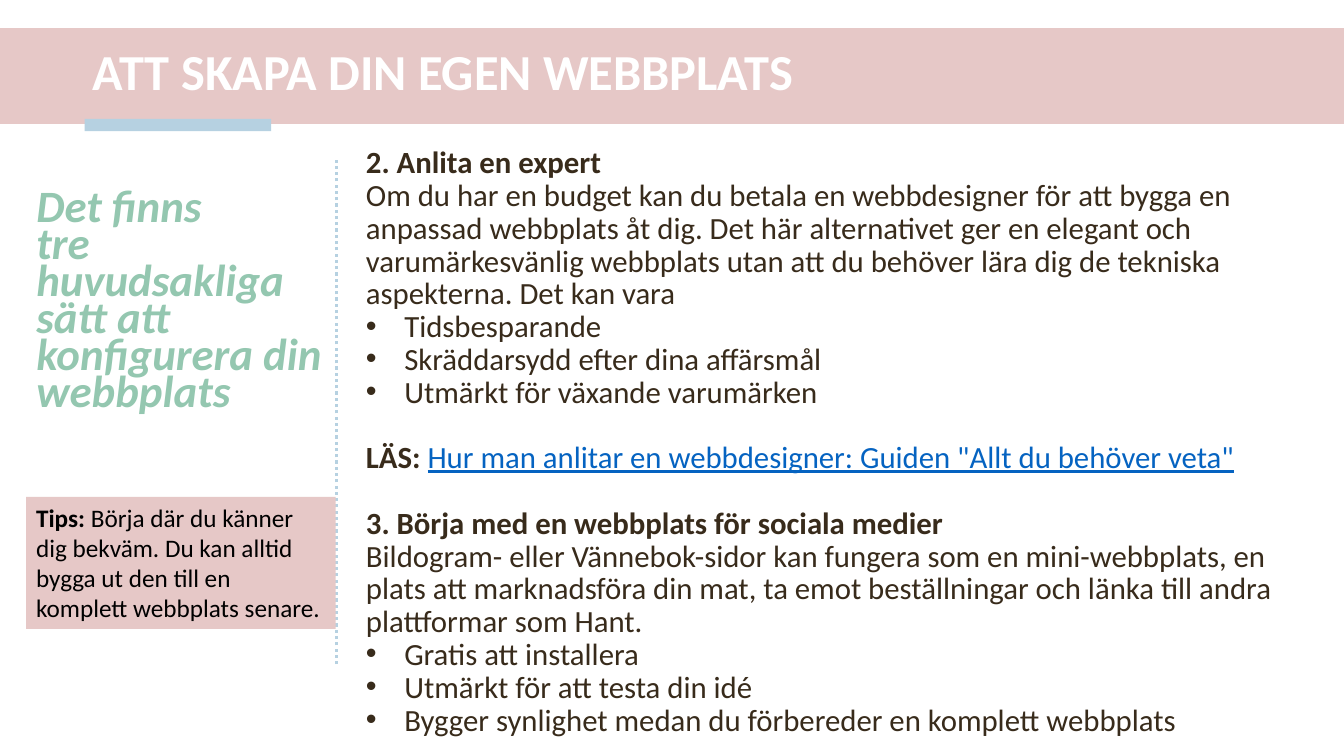
from dataclasses import dataclass

from lxml.etree import SubElement
from pptx import Presentation
from pptx.dml.color import RGBColor
from pptx.enum.dml import MSO_LINE
from pptx.enum.shapes import MSO_CONNECTOR, MSO_SHAPE
from pptx.enum.text import MSO_ANCHOR, MSO_AUTO_SIZE, PP_ALIGN
from pptx.oxml.ns import qn
from pptx.util import Inches, Pt


@dataclass(frozen=True)
class Theme:
    font: str = "Calibri"
    pink: RGBColor = RGBColor(0xE6, 0xC8, 0xC7)
    blue: RGBColor = RGBColor(0xB6, 0xD1, 0xE1)
    green: RGBColor = RGBColor(0x94, 0xC7, 0xB0)
    brown: RGBColor = RGBColor(0x38, 0x2B, 0x1B)
    link: RGBColor = RGBColor(0x05, 0x63, 0xC1)
    white: RGBColor = RGBColor(0xFF, 0xFF, 0xFF)
    black: RGBColor = RGBColor(0, 0, 0)
    title_size: Pt = Pt(36)
    quote_size: Pt = Pt(32)
    body_size: Pt = Pt(22)
    tip_size: Pt = Pt(18)
    quote_leading: Pt = Pt(26.4)
    body_leading: Pt = Pt(23.4)


THEME = Theme()

TITLE = "ATT SKAPA DIN EGEN WEBBPLATS"
QUOTE = ["Det finns", "tre huvudsakliga sätt att konfigurera din webbplats"]
TIP_LABEL = "Tips: "
TIP = "Börja där du känner dig bekväm. Du kan alltid bygga ut den till en komplett webbplats senare."
READ_LABEL = "LÄS: "
READ_LINK = 'Hur man anlitar en webbdesigner: Guiden "Allt du behöver veta"'
OPTIONS = [
    (
        "2. Anlita en expert",
        "Om du har en budget kan du betala en webbdesigner för att bygga en anpassad webbplats åt dig. "
        "Det här alternativet ger en elegant och varumärkesvänlig webbplats utan att du behöver lära dig "
        "de tekniska aspekterna. Det kan vara",
        ["Tidsbesparande", "Skräddarsydd efter dina affärsmål", "Utmärkt för växande varumärken"],
    ),
    (
        "3. Börja med en webbplats för sociala medier",
        "Bildogram- eller Vännebok-sidor kan fungera som en mini-webbplats, en plats att marknadsföra "
        "din mat, ta emot beställningar och länka till andra plattformar som Hant.",
        ["Gratis att installera", "Utmärkt för att testa din idé",
         "Bygger synlighet medan du förbereder en komplett webbplats"],
    ),
]


def place(shape, left, top, width, height):
    shape.left, shape.top = Inches(left), Inches(top)
    shape.width, shape.height = Inches(width), Inches(height)


def prepare_frame(shape, anchor=MSO_ANCHOR.TOP):
    frame = shape.text_frame
    frame.word_wrap = True
    frame.auto_size = MSO_AUTO_SIZE.NONE
    frame.vertical_anchor = anchor
    return frame


def add_run(paragraph, text, size, color, bold=False, italic=False, underline=False):
    run = paragraph.add_run()
    run.text = text
    font = run.font
    font.name, font.size, font.bold, font.italic = THEME.font, size, bold, italic
    font.underline = underline
    font.color.rgb = color


def next_paragraph(frame, leading, bullet=False, gap=Pt(0)):
    """Return the frame's empty first paragraph or a new one, with its bullet and spacing set."""
    first = frame.paragraphs[0]
    paragraph = frame.add_paragraph() if first.runs else first
    properties = paragraph._p.get_or_add_pPr()
    indent = Inches(0.38) if bullet else 0
    properties.set("marL", str(indent))
    properties.set("indent", str(-indent))
    if bullet:
        SubElement(properties, qn("a:buFont"), typeface="Arial")
        SubElement(properties, qn("a:buChar"), char="•")
    else:
        SubElement(properties, qn("a:buNone"))
    paragraph.alignment = PP_ALIGN.LEFT
    paragraph.line_spacing = leading
    paragraph.space_before = gap
    paragraph.space_after = Pt(0)
    return paragraph


def add_block(slide, left, top, width, height, color):
    block = slide.shapes.add_shape(
        MSO_SHAPE.RECTANGLE, Inches(left), Inches(top), Inches(width), Inches(height))
    block.shadow.inherit = False
    block.fill.solid()
    block.fill.fore_color.rgb = color
    block.line.fill.background()
    return block


def send_to_back(shape):
    shape.element.getparent().insert(2, shape.element)


def add_divider(slide):
    divider = slide.shapes.add_connector(
        MSO_CONNECTOR.STRAIGHT, Inches(3.34), Inches(6.59), Inches(3.34), Inches(1.59))
    divider.line.color.rgb = THEME.blue
    divider.line.width = Pt(2.25)
    divider.line.dash_style = MSO_LINE.ROUND_DOT
    SubElement(divider.element.spPr, qn("a:effectLst"))


def fill_title(title):
    place(title, 0.82, 0.34, 11.93, 0.79)
    paragraph = next_paragraph(prepare_frame(title, MSO_ANCHOR.MIDDLE), 0.9)
    add_run(paragraph, TITLE, THEME.title_size, THEME.white, bold=True)


def fill_quote(quote):
    place(quote, 0.26, 1.88, 3.08, 2.59)
    frame = prepare_frame(quote)
    for text in QUOTE:
        paragraph = next_paragraph(frame, THEME.quote_leading)
        add_run(paragraph, text, THEME.quote_size, THEME.green, bold=True, italic=True)


def fill_options(body):
    place(body, 3.53, 1.41, 9.22, 6.04)
    frame = prepare_frame(body)
    leading, size, color = THEME.body_leading, THEME.body_size, THEME.brown
    for number, (heading, description, benefits) in enumerate(OPTIONS):
        if number:
            reading = next_paragraph(frame, leading, gap=leading)
            add_run(reading, READ_LABEL, size, color, bold=True)
            add_run(reading, READ_LINK, size, THEME.link, underline=True)
        gap = leading if number else Pt(0)
        add_run(next_paragraph(frame, leading, gap=gap), heading, size, color, bold=True)
        add_run(next_paragraph(frame, leading), description, size, color)
        for benefit in benefits:
            add_run(next_paragraph(frame, leading, bullet=True), benefit, size, color)


def add_tip(slide):
    tip = add_block(slide, 0.26, 4.93, 3.07, 1.31, THEME.pink)
    paragraph = next_paragraph(prepare_frame(tip), 1.0)
    add_run(paragraph, TIP_LABEL, THEME.tip_size, THEME.black, bold=True)
    add_run(paragraph, TIP, THEME.tip_size, THEME.black)


def main():
    presentation = Presentation()
    presentation.slide_width = Inches(13.33)
    presentation.slide_height = Inches(7.5)
    two_content = presentation.slide_layouts[3]
    slide = presentation.slides.add_slide(two_content)
    title, quote, body = list(slide.placeholders)[:3]

    accent = add_block(slide, 0.84, 1.18, 1.85, 0.12, THEME.blue)
    header_band = add_block(slide, 0, 0.28, 13.33, 0.95, THEME.pink)
    send_to_back(accent)
    send_to_back(header_band)

    fill_title(title)
    fill_quote(quote)
    fill_options(body)
    add_divider(slide)
    add_tip(slide)
    presentation.save("out.pptx")


if __name__ == "__main__":
    main()
